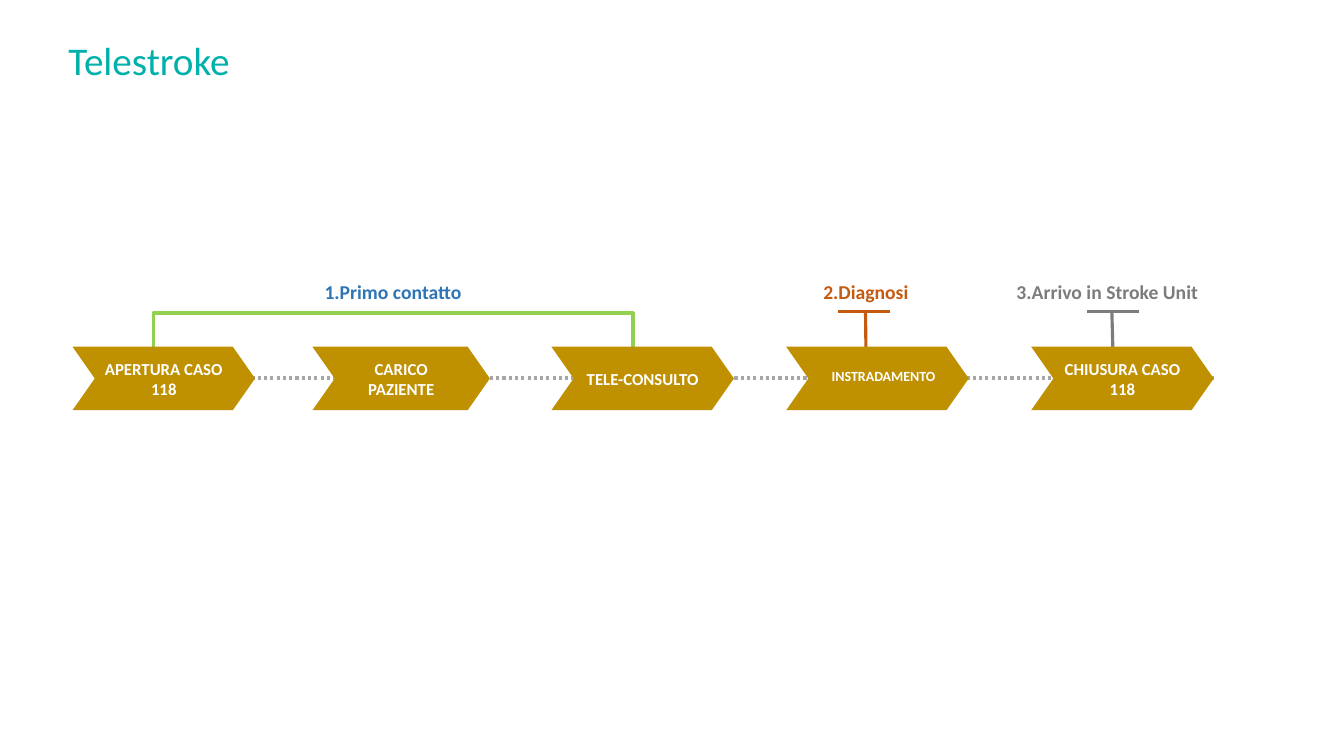
import pptx
import pptx.util
import pptx.dml.color
import pptx.enum.dml
import pptx.enum.shapes
import pptx.enum.text
import lxml.etree

SHAPE = pptx.enum.shapes.MSO_SHAPE
ALIGN = pptx.enum.text.PP_ALIGN
DASH = pptx.enum.dml.MSO_LINE
RGB = pptx.dml.color.RGBColor.from_string
COLORS = {
    "title": "00B0AB", "track": "A6A6A6", "bracket": "92D050", "step": "BF9000",
    "contact": "2E75B6", "diagnosis": "C55A11", "arrival": "7C7C7C", "white": "FFFFFF",
}

prs = pptx.Presentation()
prs.slide_width = pptx.util.Inches(13.33)
prs.slide_height = pptx.util.Inches(7.5)
col, row = prs.slide_width / 100, prs.slide_height / 100
s = prs.slides.add_slide(prs.slide_layouts[6])


def add_line(x1, y1, x2, y2, color, dash=DASH.SOLID):
    c = s.shapes.add_connector(
        pptx.enum.shapes.MSO_CONNECTOR.STRAIGHT,
        round(x1 * col), round(y1 * row), round(x2 * col), round(y2 * row))
    c.line.color.rgb = RGB(COLORS[color])
    c.line.width = pptx.util.Pt(2.25)
    c.line.dash_style = dash
    lxml.etree.SubElement(c._element.spPr, pptx.oxml.ns.qn("a:effectLst"))


def add_box(kind, x, y, w, h, text, size, color, bold=True, align=ALIGN.CENTER, **margins):
    sp = s.shapes.add_shape(
        kind, round(x * col), round(y * row), round(w * col), round(h * row))
    sp.shadow.inherit = False
    sp.fill.background()
    sp.line.fill.background()
    tf = sp.text_frame
    frame = {"word_wrap": True, "vertical_anchor": pptx.enum.text.MSO_ANCHOR.MIDDLE, **margins}
    for name, value in frame.items():
        setattr(tf, name, value)
    p = tf.paragraphs[0]
    p.alignment = align
    r = p.add_run()
    r.text = text
    font = {"name": "Calibri", "size": pptx.util.Pt(size), "bold": bold}
    for name, value in font.items():
        setattr(r.font, name, value)
    r.font.color.rgb = RGB(COLORS[color])
    return sp


step_top, step_height = 45.87, 8.4
label_top, label_height = 35.87, 5.33
bar_top = 41.2

add_line(7.05, 50, 90.3, 50, "track", DASH.ROUND_DOT)
add_box(SHAPE.RECTANGLE, 4.35, 4.8, 90.68, 6.27, "Telestroke", 28, "title",
        bold=False, align=ALIGN.LEFT)

milestones = [
    ("1.Primo contatto", 22.35, 13.8, "contact"),
    ("2.Diagnosi", 57.53, 13.8, "diagnosis"),
    ("3.Arrivo in Stroke Unit", 73.95, 16.88, "arrival"),
]
for text, x, w, color in milestones:
    sp = add_box(SHAPE.ROUNDED_RECTANGLE, x, label_top, w, label_height, text, 14, color,
                 margin_left=0, margin_right=0)
    sp.adjustments[0] = 0.19

bracket = [(11.4, step_top), (11.4, bar_top + 0.2), (47.1, bar_top + 0.2), (47.1, step_top)]
points = [(round(x * col), round(y * row)) for x, y in bracket]
ff = s.shapes.build_freeform(*points[0])
ff.add_line_segments(points[1:], close=False)
sp = ff.convert_to_shape()
sp.shadow.inherit = False
sp.fill.background()
sp.line.color.rgb = RGB(COLORS["bracket"])
sp.line.width = pptx.util.Pt(2.25)

for foot, top, bar, color in [(64.43, 64.4, 62.33, "diagnosis"), (82.8, 82.73, 80.85, "arrival")]:
    add_line(foot, step_top, top, bar_top, color)
    add_line(bar, bar_top, bar + 3.9, bar_top, color)

tight = {"margin_left": round(0.9 * col), "margin_right": 0,
         "margin_top": 0, "margin_bottom": round(0.67 * row)}
steps = [
    ("APERTURA CASO 118", 5.4, 13.58, 12, {}),
    ("CARICO PAZIENTE", 23.25, 13.2, 12, {}),
    ("TELE-CONSULTO", 41.03, 13.58, 12, {}),
    ("INSTRADAMENTO", 58.5, 13.58, 10, tight),
    ("CHIUSURA CASO 118", 76.73, 13.58, 12, {}),
]
for text, x, w, size, margins in steps:
    sp = add_box(SHAPE.CHEVRON, x, step_top, w, step_height, text, size, "white", **margins)
    sp.adjustments[0] = 0.35
    sp.fill.solid()
    sp.fill.fore_color.rgb = RGB(COLORS["step"])

prs.save("out.pptx")
